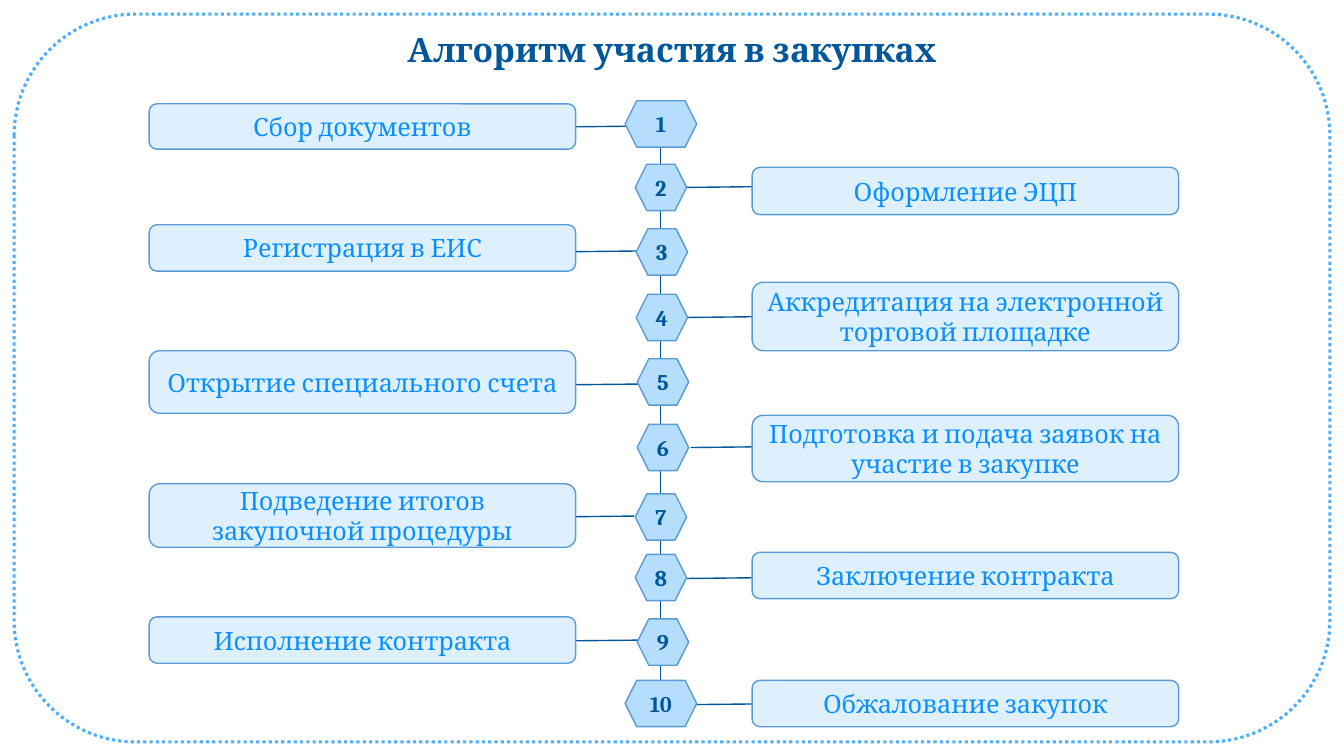
import pptx
import pptx.dml.color
import pptx.enum.dml
import pptx.enum.shapes
import pptx.enum.text
import pptx.oxml.ns
import pptx.util
from pptx.util import Inches

RGBColor = pptx.dml.color.RGBColor
Shape = pptx.enum.shapes.MSO_SHAPE

NAVY = RGBColor(0x01, 0x57, 0x9B)
BRIGHT_BLUE = RGBColor(0x0A, 0x90, 0xFE)
FRAME_BLUE = RGBColor(0x4D, 0xAF, 0xFA)
OUTLINE_BLUE = RGBColor(0x5B, 0x9B, 0xD5)
BOX_FILL = RGBColor(0xDE, 0xF0, 0xFE)
HEXAGON_FILL = RGBColor(0xB5, 0xDE, 0xFD)

FONT = "Cambria"
BOX_LEFT = (1.48, 7.46)  # odd steps stand on the left, even ones on the right
BOX_WIDTH = 4.23
HEXAGON_HEIGHT = 0.46
SPINE_X = 6.55
LINK_LENGTH = 0.92

# Step name, box top and height, hexagon left, top and width, link start x and y
STEPS = [
    ("Сбор документов", 1.03, 0.45, 6.2, 1.0, 0.71, 5.51, 1.26),
    ("Оформление ЭЦП", 1.66, 0.47, 6.3, 1.63, 0.51, 6.75, 1.86),
    ("Регистрация в ЕИС", 2.23, 0.46, 6.31, 2.27, 0.51, 5.42, 2.5),
    ("Аккредитация на электронной торговой площадке",
     2.8, 0.68, 6.31, 2.92, 0.51, 6.77, 3.15),
    ("Открытие специального счета", 3.48, 0.62, 6.32, 3.56, 0.51, 5.43, 3.82),
    ("Подготовка и подача заявок на участие в закупке",
     4.12, 0.66, 6.32, 4.21, 0.51, 6.85, 4.44),
    ("Подведение итогов закупочной процедуры",
     4.8, 0.63, 6.3, 4.9, 0.51, 5.37, 5.13),
    ("Заключение контракта", 5.48, 0.46, 6.3, 5.5, 0.51, 6.73, 5.74),
    ("Исполнение контракта", 6.12, 0.46, 6.32, 6.14, 0.51, 5.45, 6.36),
    ("Обжалование закупок", 6.75, 0.46, 6.2, 6.75, 0.71, 6.91, 6.99),
]


def write_text(box, text, size, color, bold=False):
    frame = box.text_frame
    frame.word_wrap = True
    frame.auto_size = pptx.enum.text.MSO_AUTO_SIZE.NONE
    frame.vertical_anchor = pptx.enum.text.MSO_ANCHOR.MIDDLE
    para = frame.paragraphs[0]
    para.alignment = pptx.enum.text.PP_ALIGN.CENTER
    span = para.add_run()
    span.text = text
    span.font.name = FONT
    span.font.size = pptx.util.Pt(size)
    span.font.bold = bold
    span.font.color.rgb = color


def place_title(page, text):
    title = page.shapes.title
    title.left, title.top = Inches(0), Inches(0.24)
    title.width, title.height = Inches(13.33), Inches(0.5)
    write_text(title, text, size=24, color=NAVY, bold=True)


def add_outlined(page, kind, left, top, width, height,
                 fill=None, line=OUTLINE_BLUE, weight=1):
    box = page.shapes.add_shape(
        kind, Inches(left), Inches(top), Inches(width), Inches(height))
    box.shadow.inherit = False
    if fill is None:
        box.fill.background()
    else:
        box.fill.solid()
        box.fill.fore_color.rgb = fill
    box.line.color.rgb = line
    box.line.width = pptx.util.Pt(weight)
    return box


def add_line(page, x1, y1, x2, y2):
    line = page.shapes.add_connector(
        pptx.enum.shapes.MSO_CONNECTOR.STRAIGHT,
        Inches(x1), Inches(y1), Inches(x2), Inches(y2))
    line.line.color.rgb = NAVY
    line.line.width = pptx.util.Pt(1)
    properties = line._element.spPr
    properties.append(properties.makeelement(pptx.oxml.ns.qn("a:effectLst"), {}))


def add_step(page, number, step):
    name, top, height, hexagon_left, hexagon_top, hexagon_width, link_x, link_y = step
    add_line(page, link_x, link_y, link_x + LINK_LENGTH, link_y - 0.01)

    box = add_outlined(page, Shape.ROUNDED_RECTANGLE, BOX_LEFT[(number - 1) % 2],
                       top, BOX_WIDTH, height, fill=BOX_FILL)
    write_text(box, name, size=18, color=BRIGHT_BLUE)

    hexagon = add_outlined(page, Shape.HEXAGON, hexagon_left, hexagon_top,
                           hexagon_width, HEXAGON_HEIGHT, fill=HEXAGON_FILL)
    write_text(hexagon, str(number), size=16, color=NAVY, bold=True)


def main():
    deck = pptx.Presentation()
    deck.slide_width, deck.slide_height = Inches(13.33), Inches(7.5)
    page = deck.slides.add_slide(deck.slide_layouts[5])

    # Title and dotted frame
    place_title(page, "Алгоритм участия в закупках")
    frame = add_outlined(page, Shape.ROUNDED_RECTANGLE, 0.14, 0.14, 13.05, 7.22,
                         line=FRAME_BLUE, weight=2.25)
    frame.line.dash_style = pptx.enum.dml.MSO_LINE.ROUND_DOT

    # Spine with the steps on alternating sides
    add_line(page, SPINE_X, 1.25, SPINE_X, 7.07)
    for number, step in enumerate(STEPS, start=1):
        add_step(page, number, step)

    deck.save("out.pptx")


if __name__ == "__main__":
    main()
